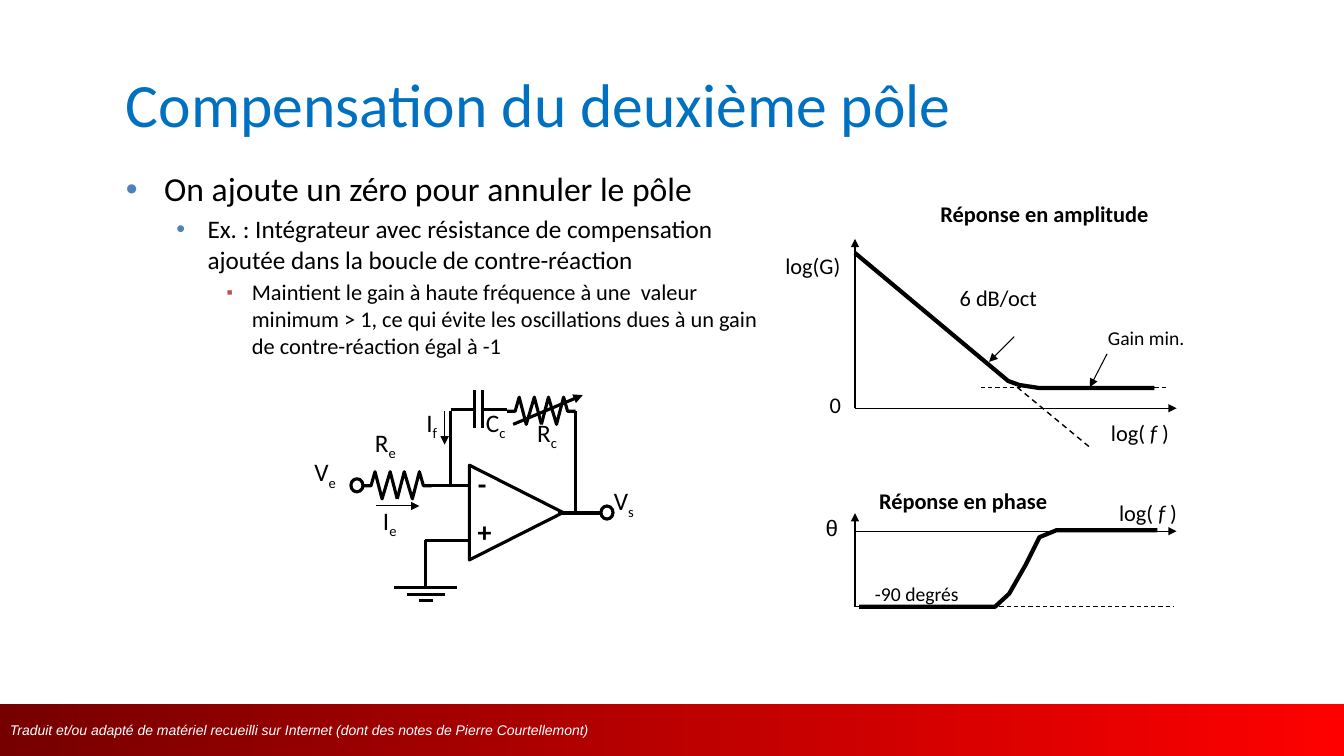
from dataclasses import dataclass

from lxml import etree
from pptx import Presentation
from pptx import util as u
from pptx.dml.color import RGBColor
from pptx.enum import dml, shapes, text
from pptx.oxml.ns import qn

PX = 9144


@dataclass(frozen=True)
class Theme:
    ink: str = "000000"
    title: str = "0070C0"
    bullet: str = "4F81BD"
    accent: str = "C0504D"
    paper: str = "FFFFFF"
    band: tuple = ("760000", "FF0000")
    font: str = "Calibri"
    footer_font: str = "Arial"
    title_size: int = 44
    body_sizes: tuple = (24, 18, 16)
    sign_size: int = 20
    symbol_size: int = 18
    label_size: int = 16
    note_size: int = 14
    footer_size: int = 10
    thin: float = 0.75
    guide: float = 1
    wire: float = 2.25
    curve: float = 3


T = Theme()


def px(*lengths):
    return [u.Emu(n * PX) for n in lengths]


def color(value):
    return RGBColor.from_string(value)


def add_run(paragraph, words, size, ink=T.ink, font=T.font, bold=False, italic=False, sub=False):
    run = paragraph.add_run()
    run.text = words
    run.font.size = u.Pt(size)
    run.font.name = font
    run.font.bold = bold
    run.font.italic = italic
    run.font.color.rgb = color(ink)
    if sub:
        run._r.get_or_add_rPr().set("baseline", "-25000")


def text_box(slide, box, middle=False):
    frame = slide.shapes.add_textbox(*px(*box)).text_frame
    frame.word_wrap = True
    if middle:
        frame.vertical_anchor = text.MSO_ANCHOR.MIDDLE
    return frame


def label(slide, box, *runs, size=T.label_size, **style):
    frame = text_box(slide, box)
    frame.word_wrap = False
    frame.auto_size = text.MSO_AUTO_SIZE.SHAPE_TO_FIT_TEXT
    for words, extra in runs:
        add_run(frame.paragraphs[0], words, size, **style, **extra)


def symbol(slide, box, letter, index):
    label(slide, box, (letter, {}), (index, {"sub": True}), size=T.symbol_size)


def frequency(slide, box):
    label(slide, box, ("log( ", {}), ("f ", {"italic": True}), (")", {}))


def bullet(paragraph, char, ink, left, hang, percent=100):
    props = paragraph._p.get_or_add_pPr()
    props.set("marL", str(left * PX))
    props.set("indent", str(-hang * PX))
    etree.SubElement(etree.SubElement(props, qn("a:buClr")), qn("a:srgbClr"), val=ink)
    etree.SubElement(props, qn("a:buSzPct"), val=str(percent * 1000))
    etree.SubElement(props, qn("a:buFont"), typeface="Arial")
    etree.SubElement(props, qn("a:buChar"), char=char)


def segment(slide, x1, y1, x2, y2, width=T.wire, arrow=False, dashed=False):
    wire = slide.shapes.add_connector(shapes.MSO_CONNECTOR.STRAIGHT, *px(x1, y1, x2, y2))
    wire.line.color.rgb = color(T.ink)
    wire.line.width = u.Pt(width)
    if dashed:
        wire.line.dash_style = dml.MSO_LINE.DASH
    if arrow:
        etree.SubElement(wire.line._get_or_add_ln(), qn("a:tailEnd"), type="triangle")
    etree.SubElement(wire._element.spPr, qn("a:effectLst"))


def outline(shape, width=T.wire):
    shape.shadow.inherit = False
    shape.fill.background()
    shape.line.color.rgb = color(T.ink)
    shape.line.width = u.Pt(width)


def polyline(slide, points, width):
    builder = slide.shapes.build_freeform(*points[0], scale=PX)
    builder.add_line_segments(points[1:], close=False)
    outline(builder.convert_to_shape(), width)


def symbol_shape(slide, preset, box, rotation=0):
    shape = slide.shapes.add_shape(preset, *px(*box))
    shape.rotation = rotation
    outline(shape)


def resistor(slide, left, top):
    half = [(0, 14), (8, 14), (12, 0), (19, 27), (27, 0), (34, 27)]
    for start, way in ((left, 1), (left + 68, -1)):
        polyline(slide, [(start + way * x, top + y) for x, y in half], T.wire)


def footer(slide):
    band = slide.shapes.add_shape(shapes.MSO_SHAPE.RECTANGLE, *px(0, 698, 1333, 52))
    band.shadow.inherit = False
    band.line.fill.background()
    band.fill.gradient()
    band.fill.gradient_angle = 0
    for stop, ink, place in zip(band.fill.gradient_stops, T.band, (0, 1)):
        stop.color.rgb = color(ink)
        stop.position = place
    band.text_frame.vertical_anchor = text.MSO_ANCHOR.MIDDLE
    credit = band.text_frame.paragraphs[0]
    credit.alignment = text.PP_ALIGN.LEFT
    add_run(credit, "Traduit et/ou adapté de matériel recueilli sur Internet "
            "(dont des notes de Pierre Courtellemont)",
            T.footer_size, T.paper, T.footer_font, italic=True)


def outline_text(slide):
    title = text_box(slide, (115, 46, 974, 112), middle=True)
    add_run(title.paragraphs[0], "Compensation du deuxième pôle", T.title_size, T.title)
    points = [
        ("On ajoute un zéro pour annuler le pôle", "•", T.bullet, 38, 38, 100),
        ("Ex. : Intégrateur avec résistance de compensation ajoutée dans la boucle "
         "de contre-réaction", "•", T.bullet, 81, 31, 100),
        ("Maintient le gain à haute fréquence à une  valeur minimum > 1, ce qui évite "
         "les oscillations dues à un gain de contre-réaction égal à -1",
         "▪", T.accent, 125, 25, 80),
    ]
    body = text_box(slide, (115, 162, 669, 259))
    for level, (words, *mark) in enumerate(points):
        paragraph = body.add_paragraph() if level else body.paragraphs[0]
        paragraph.level = level
        paragraph.space_before = u.Pt(T.body_sizes[level] * 0.2)
        bullet(paragraph, *mark)
        add_run(paragraph, words, T.body_sizes[level])


def integrator(slide):
    ground = [(391, 583, 453, 583), (404, 590, 441, 590), (416, 596, 429, 596),
              (422, 536, 422, 583)]
    amplifier = [(466, 482, 422, 482), (466, 536, 422, 536), (596, 509, 553, 509)]
    capacitor = [(471, 387, 471, 425), (479, 387, 479, 425)]
    feedback = [(479, 406, 503, 406), (447, 406, 471, 406),
                (447, 408, 447, 482), (571, 408, 571, 509)]
    for ends in ground + amplifier + capacitor + feedback:
        segment(slide, *ends)
    resistor(slide, 360, 468)
    resistor(slide, 503, 394)
    symbol_shape(slide, shapes.MSO_SHAPE.ISOSCELES_TRIANGLE, (465, 462, 94, 93), 90)
    for left, top in ((348, 475), (596, 502)):
        symbol_shape(slide, shapes.MSO_SHAPE.OVAL, (left, top, 12, 13))
    segment(slide, 509, 421, 578, 392, arrow=True)
    for current in ((373, 502, 416, 502), (441, 408, 441, 441)):
        segment(slide, *current, width=T.thin, arrow=True)
    label(slide, (464, 458, 29, 44), ("-", {}), size=T.sign_size, bold=True)
    label(slide, (464, 506, 34, 43), ("+", {}), size=T.sign_size, bold=True)
    for letter, index, left, top, width in (
            ("R", "e", 362, 419, 48), ("V", "e", 302, 448, 48), ("V", "s", 599, 477, 41),
            ("C", "c", 472, 399, 41), ("I", "e", 370, 496, 40), ("I", "f", 413, 399, 37),
            ("R", "c", 523, 409, 47)):
        symbol(slide, (left, top, width, 40), letter, index)


def amplitude_plot(slide):
    for arrow in ((848, 405, 1167, 405), (848, 405, 848, 237),
                  (1006, 334, 981, 359), (1098, 351, 1081, 384)):
        segment(slide, *arrow, width=T.thin, arrow=True)
    segment(slide, 1080, 443, 848, 251, width=T.guide, dashed=True)
    segment(slide, 973, 384, 1156, 384, width=T.thin, dashed=True)
    polyline(slide, [(848, 251), (1000, 378), (1011, 382), (1031, 385), (1145, 385)], T.curve)
    label(slide, (923, 194, 227, 37), ("Réponse en amplitude", {}), bold=True)
    label(slide, (769, 245, 75, 37), ("log(G)", {}))
    label(slide, (813, 383, 31, 37), ("0", {}))
    label(slide, (942, 277, 97, 37), ("6 dB/oct", {}))
    label(slide, (1089, 318, 96, 33), ("Gain min.", {}), size=T.note_size)
    frequency(slide, (1092, 411, 78, 37))


def phase_plot(slide):
    for axis in ((848, 527, 1167, 527), (848, 602, 848, 509)):
        segment(slide, *axis, width=T.thin, arrow=True)
    segment(slide, 848, 602, 1164, 602, width=T.thin, dashed=True)
    polyline(slide, [(852, 602), (987, 602), (1001, 589), (1017, 561), (1031, 533),
                     (1048, 526), (1148, 526)], T.curve)
    label(slide, (862, 478, 188, 37), ("Réponse en phase", {}), bold=True)
    label(slide, (809, 505, 32, 37), ("θ", {}), font=T.footer_font)
    label(slide, (858, 572, 103, 33), ("-90 degrés", {}), size=T.note_size)
    frequency(slide, (1100, 490, 78, 37))


def main():
    deck = Presentation()
    deck.slide_width, deck.slide_height = px(1333, 750)
    slide = deck.slides.add_slide(deck.slide_layouts[6])
    footer(slide)
    outline_text(slide)
    integrator(slide)
    amplitude_plot(slide)
    phase_plot(slide)
    deck.save("out.pptx")


if __name__ == "__main__":
    main()
